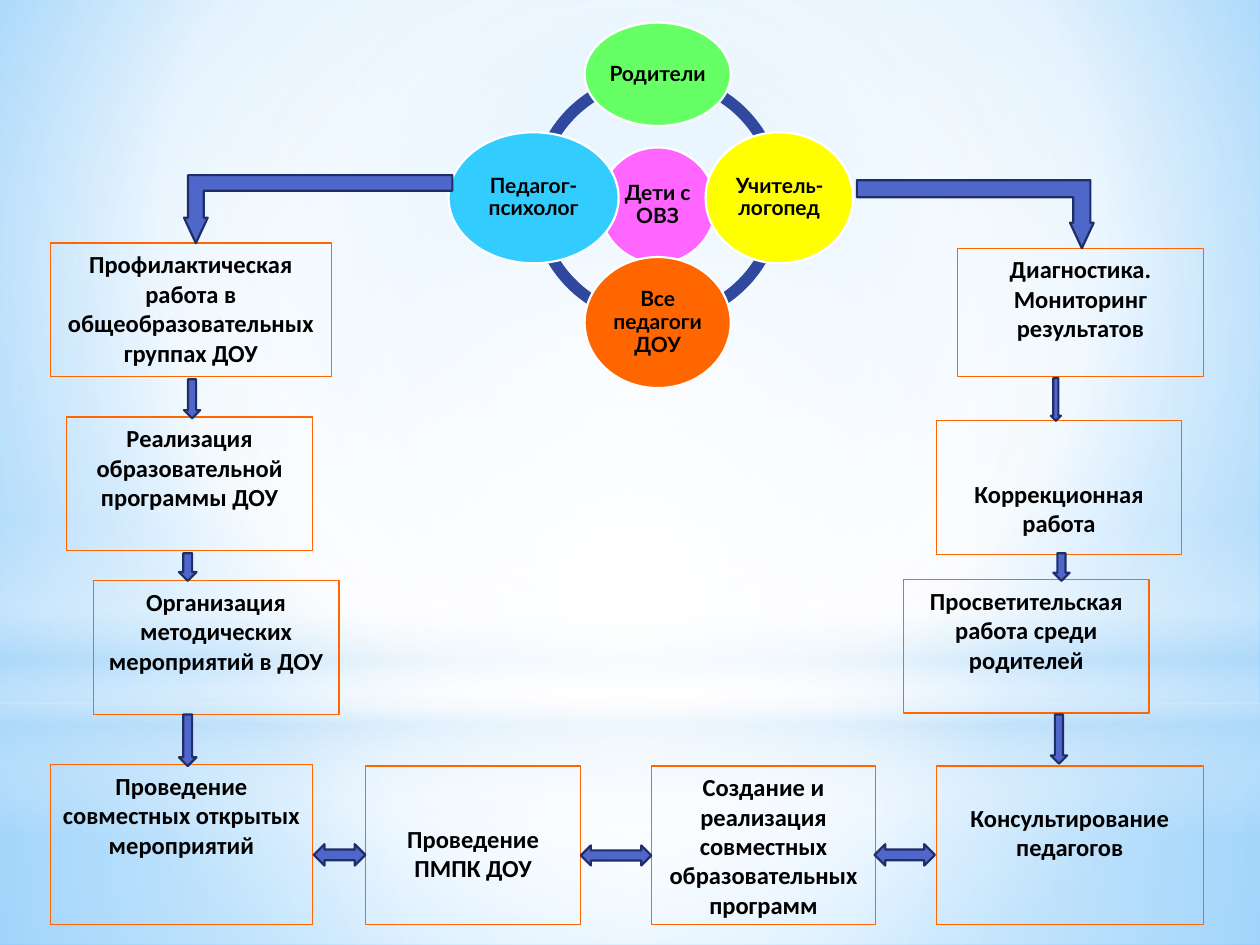
from typing import NamedTuple, Optional

from lxml.etree import SubElement
from pptx import Presentation
from pptx.dml.color import RGBColor
from pptx.enum.shapes import MSO_SHAPE
from pptx.enum.text import MSO_ANCHOR, PP_ALIGN
from pptx.oxml.ns import qn
from pptx.util import Inches, Pt

ORANGE, RING, ARROW, ARROW_EDGE = "FF6600", "31489F", "4E67C8", "1F2E69"
CENTRE = (50, 50, 50, 50)


class Place(NamedTuple):
    left: float
    top: float
    width: float
    height: float


class Stop(NamedTuple):
    position: int
    color: str
    alpha: int = 100


class Layer(NamedTuple):
    kind: MSO_SHAPE
    place: Place
    stops: list[Stop]
    focus: Optional[tuple] = CENTRE


class Person(NamedTuple):
    text: str
    color: str
    place: Place


class Task(NamedTuple):
    text: str
    place: Place
    text_drop: float = 0


class Arrow(NamedTuple):
    kind: MSO_SHAPE
    place: Place


class Bend(NamedTuple):
    place: Place
    shaft: float
    flipped: bool


LAYERS = [
    Layer(MSO_SHAPE.RECTANGLE, Place(0, 5.58, 10, 1.92),
          [Stop(0, "FFFFFF", 91), Stop(37, "FFFFFF", 76), Stop(100, "B4DCFA", 79)]),
    Layer(MSO_SHAPE.RECTANGLE, Place(0, 0, 10, 5.58),
          [Stop(0, "FFFFFF", 89), Stop(48, "FFFFFF", 62), Stop(100, "B4DCFA", 79)]),
    Layer(MSO_SHAPE.RECTANGLE, Place(0, 4.12, 10, 2.5),
          [Stop(0, "FFFFFF", 0), Stop(29, "FFFFFF", 30), Stop(45, "B4DCFA", 40),
           Stop(55, "FFFFFF", 26), Stop(65, "B4DCFA", 60), Stop(100, "FFFFFF", 0)], None),
    Layer(MSO_SHAPE.OVAL, Place(0, 1.75, 10, 5.58),
          [Stop(0, "FFFFFF"), Stop(56, "FFFFFF", 0)]),
]
# Start and end of each ring quarter, in adjustment units (216 is a full turn)
RING_ARCS = [(108, 162.43), (53.57, 108), (216, 53.57), (162.43, 0)]
PEOPLE = [
    Person("Дети с ОВЗ", "FF66FF", Place(4.76, 1.17, 0.92, 0.92)),
    Person("Родители", "66FF66", Place(4.64, 0.18, 1.16, 0.82)),
    Person("Учитель-логопед", "FFFF00", Place(5.6, 1.05, 1.17, 1.04)),
    Person("Все педагоги ДОУ", ORANGE, Place(4.64, 2.04, 1.16, 1.04)),
    Person("Педагог-психолог", "33CCFF", Place(3.56, 1.05, 1.35, 1.04)),
]
TASKS = [
    Task("Диагностика. Мониторинг результатов", Place(7.6, 1.97, 1.95, 1.02)),
    Task("Коррекционная работа", Place(7.43, 3.34, 1.95, 1.06), 0.41),
    Task("Просветительская работа среди родителей", Place(7.17, 4.6, 1.95, 1.06)),
    Task("Реализация образовательной программы ДОУ", Place(0.53, 3.31, 1.95, 1.06)),
    Task("Проведение совместных открытых мероприятий", Place(0.4, 6.07, 2.08, 1.27)),
    Task("Организация методических мероприятий в ДОУ", Place(0.74, 4.61, 1.95, 1.06)),
    Task("Профилактическая работа в общеобразовательных группах ДОУ",
         Place(0.4, 1.93, 2.23, 1.06)),
    Task("Создание и реализация совместных образовательных программ",
         Place(5.17, 6.08, 1.78, 1.26)),
    Task("Проведение ПМПК ДОУ", Place(2.9, 6.08, 1.71, 1.26), 0.41),
    Task("Консультирование педагогов", Place(7.43, 6.08, 2.12, 1.26), 0.24),
]
DOWN, BOTH = MSO_SHAPE.DOWN_ARROW, MSO_SHAPE.LEFT_RIGHT_ARROW
ARROWS = [
    Arrow(DOWN, Place(8.34, 5.67, 0.13, 0.39)),
    Arrow(DOWN, Place(8.36, 4.39, 0.13, 0.22)),
    Arrow(DOWN, Place(8.34, 3, 0.08, 0.34)),
    Arrow(DOWN, Place(1.46, 3.01, 0.13, 0.31)),
    Arrow(DOWN, Place(1.42, 4.39, 0.14, 0.22)),
    Arrow(DOWN, Place(1.42, 5.67, 0.14, 0.41)),
    Arrow(BOTH, Place(6.94, 6.7, 0.48, 0.17)),
    Arrow(BOTH, Place(4.61, 6.71, 0.56, 0.16)),
    Arrow(BOTH, Place(2.49, 6.7, 0.41, 0.17)),
]
BENDS = [
    Bend(Place(1.46, 1.39, 2.13, 0.54), 0.23, False),
    Bend(Place(6.8, 1.43, 1.88, 0.54), 0.25, True),
]


def rgb(color: str) -> RGBColor:
    return RGBColor.from_string(color)


def add_shape(page, kind, place: Place, fill=None, line=None, line_width=1.25):
    shape = page.shapes.add_shape(kind, *(Inches(length) for length in place))
    shape.shadow.inherit = False
    if fill:
        shape.fill.solid()
        shape.fill.fore_color.rgb = rgb(fill)
    else:
        shape.fill.background()
    if line:
        shape.line.color.rgb = rgb(line)
        shape.line.width = Pt(line_width)
    else:
        shape.line.fill.background()
    return shape


def set_gradient(properties, stops: list[Stop], focus: Optional[tuple]) -> None:
    """Swap the solid fill for a circular gradient, or a vertical one without focus."""
    solid = properties.find(qn("a:solidFill"))
    gradient = SubElement(properties, qn("a:gradFill"), rotWithShape="1")
    properties.replace(solid, gradient)
    stop_list = SubElement(gradient, qn("a:gsLst"))
    for stop in stops:
        mark = SubElement(stop_list, qn("a:gs"), pos=str(stop.position * 1000))
        color = SubElement(mark, qn("a:srgbClr"), val=stop.color)
        if stop.alpha < 100:
            SubElement(color, qn("a:alpha"), val=str(stop.alpha * 1000))
    if focus:
        path = SubElement(gradient, qn("a:path"), path="circle")
        sides = {side: str(value * 1000) for side, value in zip("ltrb", focus)}
        SubElement(path, qn("a:fillToRect"), **sides)
    else:
        SubElement(gradient, qn("a:lin"), ang="5400000", scaled="0")


def write(shape, text: str, font: str, size: int):
    shape.text_frame.word_wrap = True
    para = shape.text_frame.paragraphs[0]
    para.alignment = PP_ALIGN.CENTER
    span = para.add_run()
    span.text = text
    span.font.name, span.font.size, span.font.bold = font, Pt(size), True
    span.font.color.rgb = rgb("000000")
    return para


def draw_background(page) -> None:
    page.background.fill.solid()
    page.background.fill.fore_color.rgb = rgb("FFFFFF")
    set_gradient(page.element.find(".//" + qn("p:bgPr")),
                 [Stop(0, "9ED5FF"), Stop(60, "FFFFFF"), Stop(100, "5BB9FF")],
                 (20, 10, 20, 60))
    for layer in LAYERS:
        shape = add_shape(page, layer.kind, layer.place, "FFFFFF")
        set_gradient(shape.element.spPr, layer.stops, layer.focus)


def draw_person(page, person: Person) -> None:
    oval = add_shape(page, MSO_SHAPE.OVAL, person.place, person.color, "FFFFFF")
    frame = oval.text_frame
    frame.vertical_anchor = MSO_ANCHOR.MIDDLE
    frame.margin_left = frame.margin_right = Inches(0.02)
    frame.margin_top = frame.margin_bottom = Inches(0.02)
    write(oval, person.text, "Lato", 12).line_spacing = 0.9


def draw_task(page, task: Task) -> None:
    box = add_shape(page, MSO_SHAPE.RECTANGLE, task.place, None, ORANGE, 0.75)
    box.text_frame.vertical_anchor = MSO_ANCHOR.TOP
    box.text_frame.margin_top = Inches(0.05 + task.text_drop)
    write(box, task.text, "Calibri", 14)


def draw_bend(page, bend: Bend) -> None:
    arrow = add_shape(page, MSO_SHAPE.BENT_UP_ARROW, bend.place, ARROW, ARROW_EDGE)
    for index, value in enumerate((bend.shaft, 0.174, 0.375)):
        arrow.adjustments[index] = value
    arrow.rotation = 180
    if bend.flipped:
        arrow.element.spPr.find(qn("a:xfrm")).set("flipH", "1")


def main() -> None:
    deck = Presentation()
    deck.slide_width, deck.slide_height = Inches(10), Inches(7.5)
    page = deck.slides.add_slide(deck.slide_layouts[6])
    draw_background(page)

    # Ring of people around the children
    for start, end in RING_ARCS:
        arc = add_shape(page, MSO_SHAPE.BLOCK_ARC, Place(4.21, 0.57, 2.01, 2.01), RING)
        for index, value in enumerate((start, end, 0.046)):
            arc.adjustments[index] = value
    for person in PEOPLE:
        draw_person(page, person)

    # Tasks and the arrows between them
    for task in TASKS:
        draw_task(page, task)
    for arrow in ARROWS:
        add_shape(page, arrow.kind, arrow.place, ARROW, ARROW_EDGE)
    for bend in BENDS:
        draw_bend(page, bend)

    deck.save("out.pptx")


if __name__ == "__main__":
    main()
